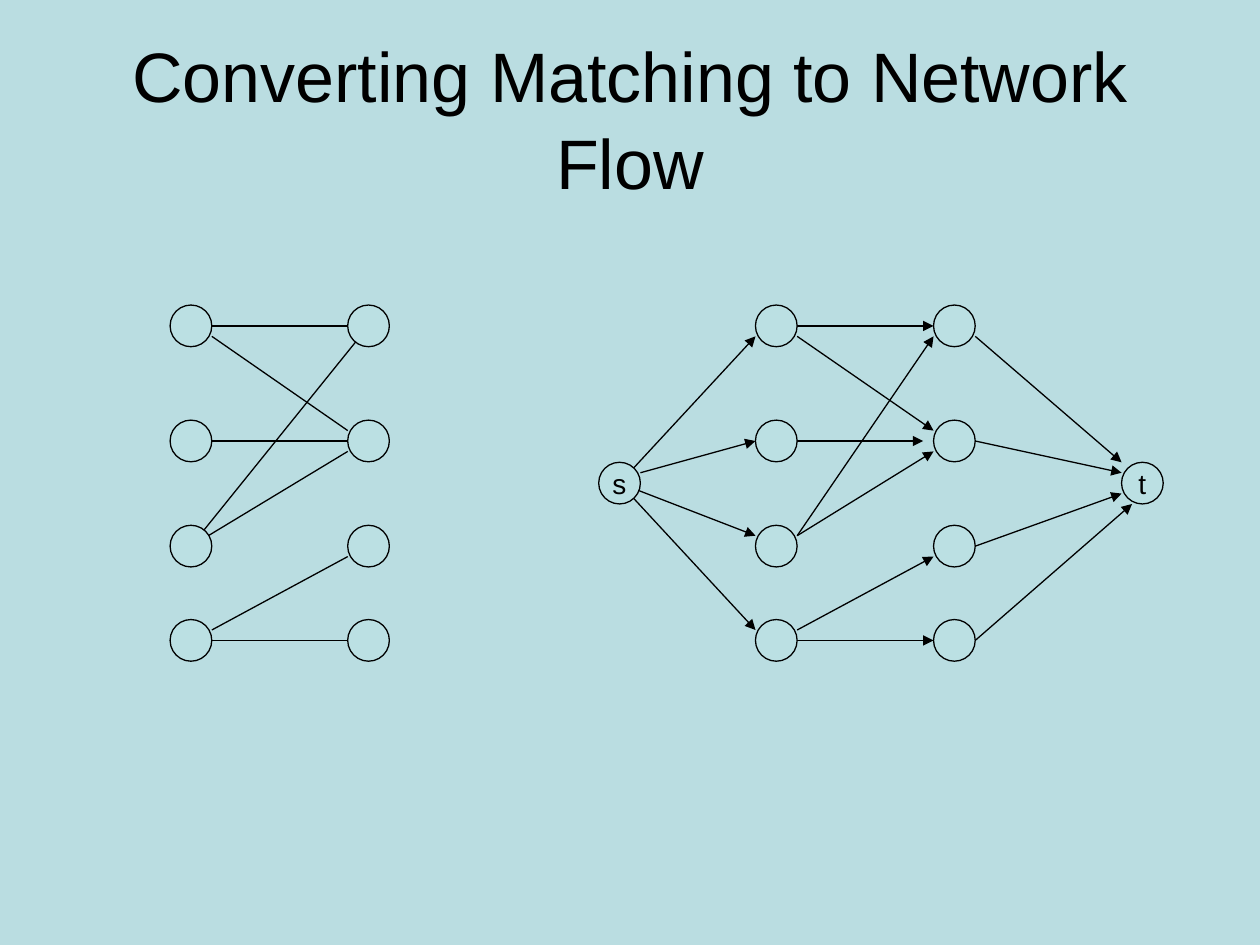
from dataclasses import dataclass

from lxml import etree
from pptx import Presentation
from pptx.dml.color import RGBColor
from pptx.enum.shapes import MSO_CONNECTOR, MSO_SHAPE
from pptx.enum.text import MSO_ANCHOR, MSO_AUTO_SIZE, PP_ALIGN
from pptx.oxml.ns import qn
from pptx.util import Cm, Pt

STRAIGHT = MSO_CONNECTOR.STRAIGHT
OVAL = MSO_SHAPE.OVAL
MIDDLE = MSO_ANCHOR.MIDDLE
CENTERED = PP_ALIGN.CENTER
NO_AUTOFIT = MSO_AUTO_SIZE.NONE

COLORS = {"background": "BADDE1", "node": "BBE0E3", "ink": "000000"}
FONT = "Arial"
RADIUS = 0.42
ROW_Y = [6.57, 8.89, 11.01, 12.91]
TERMINAL_Y = 9.74

# Ports are offsets from a node's centre, in radii.
Port = tuple[float, float]
CENTER: Port = (0, 0)
RIGHT: Port = (1, 0)
RIGHT_UP: Port = (1, -0.5)
RIGHT_DOWN: Port = (1, 0.5)
LEFT: Port = (-1, 0)
LEFT_UP: Port = (-1, -0.5)
LEFT_DOWN: Port = (-1, 0.5)
LEFT_GAP: Port = (-1.5, 0)
TOP_LEFT: Port = (-1, -1)
BOTTOM_LEFT: Port = (-0.5, 1)


@dataclass(frozen=True)
class Node:
    x: float
    y: float
    label: str = ""

    def at(self, port: Port) -> tuple[Cm, Cm]:
        return Cm(self.x + port[0] * RADIUS), Cm(self.y + port[1] * RADIUS)


@dataclass(frozen=True)
class Edge:
    start: Node
    start_port: Port
    end: Node
    end_port: Port
    directed: bool = True


def color(name: str) -> RGBColor:
    return RGBColor.from_string(COLORS[name])


def column(x: float) -> list[Node]:
    return [Node(x, y) for y in ROW_Y]


def matching_edges(left: list[Node], right: list[Node], directed: bool) -> list[Edge]:
    third_port = RIGHT_UP if directed else CENTER
    ports = [
        (0, RIGHT, 0, LEFT),
        (0, RIGHT_DOWN, 1, LEFT_UP),
        (1, RIGHT, 1, LEFT_GAP if directed else LEFT),
        (2, third_port, 0, LEFT_DOWN if directed else CENTER),
        (2, third_port, 1, LEFT_DOWN),
        (3, RIGHT_UP, 2, LEFT_DOWN),
        (3, RIGHT, 3, LEFT),
    ]
    return [Edge(left[a], start, right[b], end, directed) for a, start, b, end in ports]


def format_text(text_frame, size: float) -> None:
    text_frame.vertical_anchor = MIDDLE
    for paragraph in text_frame.paragraphs:
        paragraph.alignment = CENTERED
        for run in paragraph.runs:
            run.font.name = FONT
            run.font.size = Pt(size)
            run.font.color.rgb = color("ink")


def draw_edge(slide, edge: Edge) -> None:
    connector = slide.shapes.add_connector(
        STRAIGHT, *edge.start.at(edge.start_port), *edge.end.at(edge.end_port)
    )
    connector.line.color.rgb = color("ink")
    connector.line.width = Pt(0.75)
    if edge.directed:
        line = connector.line._get_or_add_ln()
        etree.SubElement(line, qn("a:tailEnd"), type="triangle")
    etree.SubElement(connector._element.spPr, qn("a:effectLst"))


def draw_node(slide, node: Node) -> None:
    circle = slide.shapes.add_shape(
        OVAL, *node.at(TOP_LEFT), Cm(2 * RADIUS), Cm(2 * RADIUS)
    )
    circle.shadow.inherit = False
    circle.fill.solid()
    circle.fill.fore_color.rgb = color("node")
    circle.line.color.rgb = color("ink")
    circle.line.width = Pt(0.75)
    if node.label:
        circle.text_frame.text = node.label
        circle.text_frame.word_wrap = False
        format_text(circle.text_frame, 16)


def draw_title(slide, text: str) -> None:
    title = slide.shapes.title
    title.left, title.top = Cm(1.27), Cm(0.76)
    title.width, title.height = Cm(22.86), Cm(3.18)
    title.text_frame.text = text
    title.text_frame.auto_size = NO_AUTOFIT
    title.text_frame.paragraphs[0].line_spacing = 1.04
    format_text(title.text_frame, 40)


def main() -> None:
    presentation = Presentation()
    presentation.slide_width, presentation.slide_height = Cm(25.4), Cm(19.05)
    slide = presentation.slides.add_slide(presentation.slide_layouts[5])
    slide.background.fill.solid()
    slide.background.fill.fore_color.rgb = color("background")
    draw_title(slide, "Converting Matching to Network Flow")

    match_left, match_right = column(3.85), column(7.43)
    flow_left, flow_right = column(15.65), column(19.24)
    source = Node(12.49, TERMINAL_Y, "s")
    sink = Node(23.03, TERMINAL_Y, "t")

    source_ports = [
        (CENTER, LEFT_DOWN), (RIGHT_UP, LEFT), (CENTER, LEFT_UP), (CENTER, LEFT_UP)
    ]
    sink_ports = [
        (RIGHT_DOWN, TOP_LEFT), (RIGHT, LEFT_UP), (RIGHT, LEFT_DOWN), (RIGHT, BOTTOM_LEFT)
    ]
    edges = matching_edges(match_left, match_right, directed=False)
    edges += matching_edges(flow_left, flow_right, directed=True)
    edges += [Edge(source, a, node, b) for node, (a, b) in zip(flow_left, source_ports)]
    edges += [Edge(node, a, sink, b) for node, (a, b) in zip(flow_right, sink_ports)]

    for edge in edges:
        draw_edge(slide, edge)
    for node in [*match_left, *match_right, *flow_left, *flow_right, source, sink]:
        draw_node(slide, node)

    presentation.save("out.pptx")


if __name__ == "__main__":
    main()
